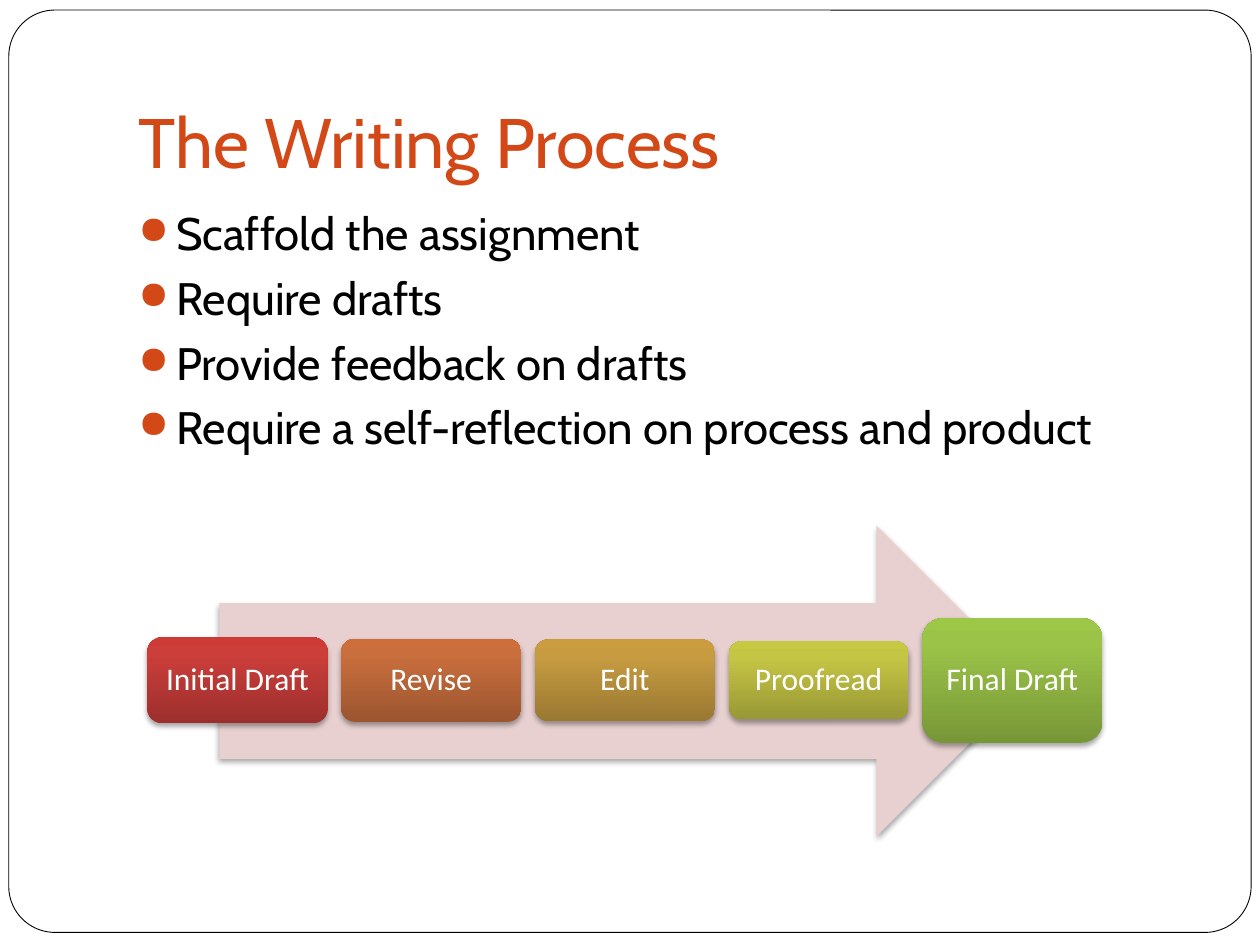
from copy import deepcopy
from pptx import Presentation
from pptx.dml.color import RGBColor
from pptx.enum.shapes import MSO_SHAPE as Shape
from pptx.enum.text import MSO_ANCHOR as Anchor, PP_ALIGN as Align
from pptx.oxml import parse_xml
from pptx.oxml.ns import nsdecls, qn
from pptx.util import Inches, Pt


def color(value):
    return RGBColor.from_string(value)


def add_shadow(shape):
    shape.shadow.inherit = False
    shape.element.spPr.find(qn("a:effectLst")).append(parse_xml(
        f'<a:outerShdw {nsdecls("a")} blurRad="{Pt(3.1)}" dist="{Pt(1.8)}" dir="5400000" rotWithShape="0">'
        '<a:srgbClr val="000000"><a:alpha val="35000"/></a:srgbClr></a:outerShdw>'))


presentation = Presentation()
presentation.slide_width = Inches(10)
presentation.slide_height = Inches(7.5)
slide = presentation.slides.add_slide(presentation.slide_layouts[6])
shapes = slide.shapes

frame = shapes.add_shape(Shape.ROUNDED_RECTANGLE, Inches(0.07), Inches(0.08), Inches(9.86), Inches(7.32))
frame.adjustments[0] = 0.05
frame.shadow.inherit = False
frame.fill.solid()
frame.fill.fore_color.rgb = color("FFFFFF")
frame.line.color.rgb = color("000000")
frame.line.width = Pt(0.5)

title = shapes.add_textbox(Inches(1), Inches(0.3), Inches(8.5), Inches(1.25)).text_frame
title.word_wrap = True
title.vertical_anchor = Anchor.BOTTOM
title.margin_bottom = Inches(0.1)
run = title.paragraphs[0].add_run()
run.text = "The Writing Process"
run.font.size = Pt(40)
run.font.name = "Cabin"
run.font.color.rgb = color("D34817")

body = shapes.add_textbox(Inches(1), Inches(1.58), Inches(8.5), Inches(5)).text_frame
body.word_wrap = True
advice = [
    "Scaffold the assignment",
    "Require drafts",
    "Provide feedback on drafts",
    "Require a self-reflection on process and product",
]
for index, text in enumerate(advice):
    paragraph = body.add_paragraph() if index else body.paragraphs[0]
    paragraph.space_before = Pt(5.8)
    properties = paragraph._p.get_or_add_pPr()
    properties.set("marL", str(Inches(0.3)))
    properties.set("indent", str(Inches(-0.3)))
    for bullet in (
        '<a:buClr {}><a:srgbClr val="D34817"/></a:buClr>',
        '<a:buSzPct {} val="85000"/>',
        '<a:buChar {} char="●"/>',
    ):
        properties.append(parse_xml(bullet.format(nsdecls("a"))))
    run = paragraph.add_run()
    run.text = text
    run.font.size = Pt(26)
    run.font.name = "Cabin"
    run.font.color.rgb = color("000000")

arrow = shapes.add_shape(Shape.RIGHT_ARROW, Inches(1.74), Inches(4.17), Inches(6.45), Inches(2.47))
arrow.fill.solid()
arrow.fill.fore_color.rgb = color("E8D0D0")
arrow.line.fill.background()
add_shadow(arrow)

steps = [
    ("Initial Draft", 0.68, ("9C2F2D", "CB3E3A", "CE3B37")),
    ("Revise", 0.66, ("9B552F", "C96E3D", "CD6E3B")),
    ("Edit", 0.65, ("997832", "C79C41", "CB9D3F")),
    ("Proofread", 0.62, ("989835", "C5C545", "C8C942")),
    ("Final Draft", 0.99, ("779737", "9BC348", "9DC746")),
]
for index, (text, height, colors) in enumerate(steps):
    step = shapes.add_shape(Shape.ROUNDED_RECTANGLE, Inches(1.17 + 6.15 * index / 4),
                            Inches(5.4 - height / 2), Inches(1.43), Inches(height))
    step.fill.gradient()
    step.fill.gradient_angle = 90
    stop_list = step.element.spPr.find(qn("a:gradFill")).find(qn("a:gsLst"))
    stop_list.append(deepcopy(stop_list[1]))
    for stop, position, value in zip(step.fill.gradient_stops, (0, 0.8, 1), colors):
        stop.position = position
        stop.color.rgb = color(value)
    step.line.fill.background()
    add_shadow(step)

    label = step.text_frame
    label.word_wrap = True
    label.vertical_anchor = Anchor.MIDDLE
    label.margin_left = label.margin_right = Inches(0.04)
    label.margin_top = label.margin_bottom = Inches(0.04)
    paragraph = label.paragraphs[0]
    paragraph.alignment = Align.CENTER
    paragraph.line_spacing = 0.9
    run = paragraph.add_run()
    run.text = text
    run.font.size = Pt(18)
    run.font.name = "Calibri"
    run.font.color.rgb = color("FFFFFF")

presentation.save("out.pptx")
